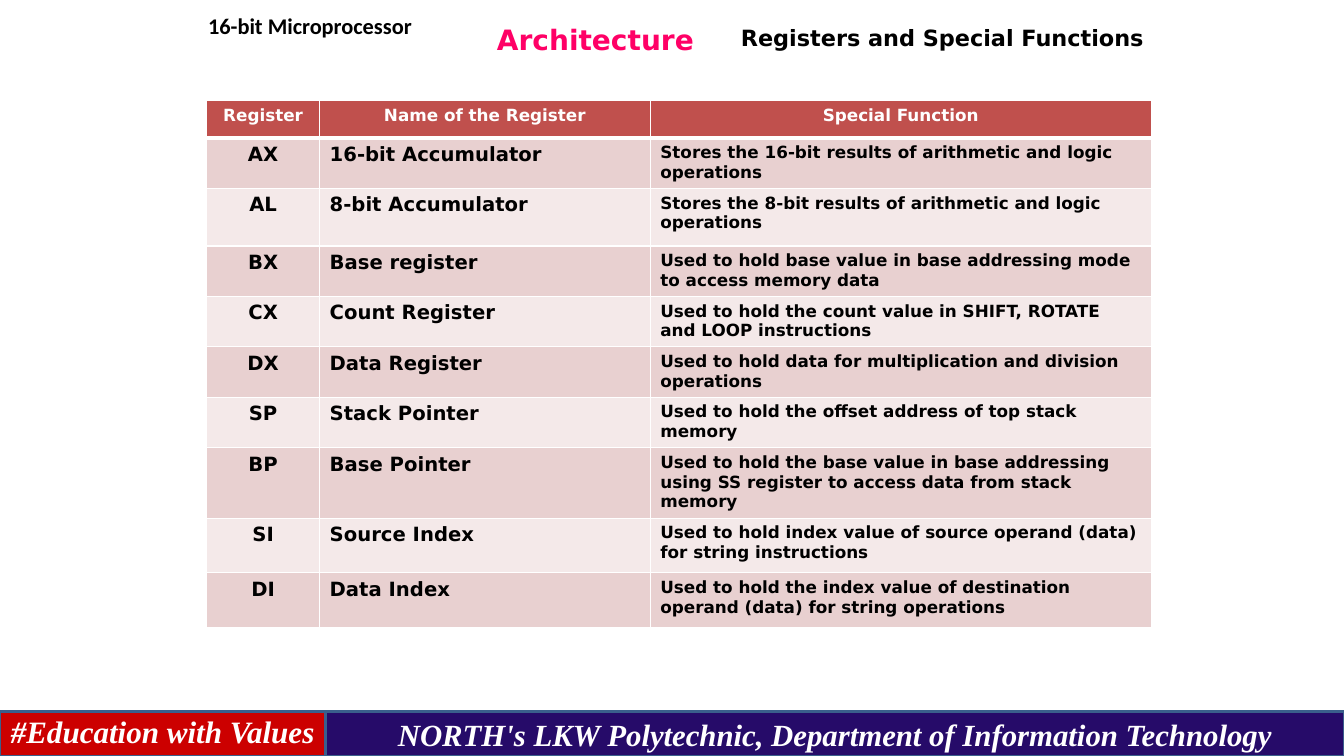
from lxml import etree
from pptx import Presentation
from pptx.dml.color import RGBColor
from pptx.enum.shapes import MSO_SHAPE
from pptx.enum.text import MSO_ANCHOR, PP_ALIGN
from pptx.oxml.ns import qn
from pptx.util import Inches, Pt

# Content
HEADER = ("Register", "Name of the Register", "Special Function")
REGISTERS = [
    ("AX", "16-bit Accumulator", "Stores the 16-bit results of arithmetic and logic operations"),
    ("AL", "8-bit Accumulator", "Stores the 8-bit results of arithmetic and logic operations"),
    ("BX", "Base register", "Used to hold base value in base addressing mode to access memory data"),
    ("CX", "Count Register", "Used to hold the count value in SHIFT, ROTATE and LOOP instructions"),
    ("DX", "Data Register", "Used to hold data for multiplication and division operations"),
    ("SP", "Stack Pointer", "Used to hold the offset address of top stack memory"),
    ("BP", "Base Pointer", "Used to hold the base value in base addressing using SS register "
                           "to access data from stack memory"),
    ("SI", "Source Index", "Used to hold index value of source operand (data) for string instructions"),
    ("DI", "Data Index", "Used to hold the index value of destination operand (data) "
                         "for string operations"),
]

# Colours and fonts
WHITE = RGBColor(0xFF, 0xFF, 0xFF)
BLACK = RGBColor(0, 0, 0)
PINK = RGBColor(0xFF, 0x00, 0x66)
HEAD_RED = RGBColor(0xC0, 0x50, 0x4D)
BANDS = (RGBColor(0xE8, 0xD0, 0xD0), RGBColor(0xF4, 0xE9, 0xE9))
FOOT_RED = RGBColor(0xCC, 0x00, 0x00)
FOOT_BLUE = RGBColor(0x26, 0x0B, 0x69)
FOOT_LINE = RGBColor(0x3A, 0x5F, 0x8C)
SANS, CALIBRI, SERIF = "DejaVu Sans", "Calibri", "Times New Roman"
LEFT, CENTER = PP_ALIGN.LEFT, PP_ALIGN.CENTER
TOP, MIDDLE = MSO_ANCHOR.TOP, MSO_ANCHOR.MIDDLE

# Layout in inches
WIDTH, HEIGHT = 13.33, 7.5
FOOT_H, FOOT_SPLIT = 0.44, 3.23
TABLE_AT = (2.05, 1)
COLS = (1.12, 3.28, 4.97)
ROWS = (0.37, 0.5, 0.57, 0.5, 0.5, 0.5, 0.5, 0.7, 0.54, 0.54)

# text, box, size, font, colour, alignment, anchor, wrap
TITLES = [
    ("Architecture", (4.83, 0.12, 6.58, 0.53), 20, SANS, PINK, LEFT, MIDDLE, True),
    ("16-bit Microprocessor", (1.74, 0.07, 2.67, 0.37), 16, CALIBRI, BLACK, CENTER, TOP, True),
    ("Registers and Special Functions", (7.25, 0.19, 4.21, 0.37), 16, SANS, BLACK, LEFT, TOP, False),
]
# text, left, right, fill, size, line spacing, space before
FOOTER = [
    ("#Education with Values", 0, FOOT_SPLIT, FOOT_RED, 22.2, 0.9, 10),
    ("NORTH's LKW Polytechnic, Department of Information Technology",
     FOOT_SPLIT, WIDTH, FOOT_BLUE, 22, 1.0, 0),
]


def write(tf, text, size, font, color, align, italic=False):
    tf.text = text
    p = tf.paragraphs[0]
    p.alignment = align
    f = p.runs[0].font
    f.size, f.name, f.bold, f.italic = Pt(size), font, True, italic
    f.color.rgb = color
    return p


def border(cell, bottom):
    """White cell borders; they must come before the fill."""
    pr = cell._tc.get_or_add_tcPr()
    for side, width in (("L", 1), ("R", 1), ("T", 1), ("B", bottom)):
        ln = etree.SubElement(pr, qn(f"a:ln{side}"), w=str(Pt(width)))
        fill = etree.SubElement(ln, qn("a:solidFill"))
        etree.SubElement(fill, qn("a:srgbClr"), val=str(WHITE))


def add_titles(slide):
    for text, box, size, font, color, align, anchor, wrap in TITLES:
        tf = slide.shapes.add_textbox(*map(Inches, box)).text_frame
        tf.word_wrap, tf.vertical_anchor = wrap, anchor
        write(tf, text, size, font, color, align)


def add_registers(slide):
    box = (*TABLE_AT, sum(COLS), sum(ROWS))
    table = slide.shapes.add_table(len(ROWS), len(COLS), *map(Inches, box)).table
    for col, width in zip(table.columns, COLS):
        col.width = Inches(width)
    for row, height in zip(table.rows, ROWS):
        row.height = Inches(height)
    for i, texts in enumerate([HEADER, *REGISTERS]):
        head = i == 0
        for j, text in enumerate(texts):
            cell = table.cell(i, j)
            border(cell, 3 if head else 1)
            cell.fill.solid()
            cell.fill.fore_color.rgb = HEAD_RED if head else BANDS[(i - 1) % 2]
            write(cell.text_frame, text, 12 if head or j == 2 else 14, SANS,
                  WHITE if head else BLACK, CENTER if head or j == 0 else LEFT)


def add_footer(slide):
    for text, left, right, fill, size, spacing, before in FOOTER:
        box = (left, HEIGHT - FOOT_H, right - left, FOOT_H)
        sp = slide.shapes.add_shape(MSO_SHAPE.RECTANGLE, *map(Inches, box))
        sp.shadow.inherit = False
        sp.fill.solid()
        sp.fill.fore_color.rgb = fill
        sp.line.color.rgb = FOOT_LINE
        sp.line.width = Pt(2)
        tf = sp.text_frame
        tf.word_wrap, tf.vertical_anchor = True, MIDDLE
        tf.margin_left = tf.margin_right = Inches(0.05)
        p = write(tf, text, size, SERIF, WHITE, CENTER, italic=True)
        p.line_spacing, p.space_before = spacing, Pt(before)


def main():
    prs = Presentation()
    prs.slide_width, prs.slide_height = Inches(WIDTH), Inches(HEIGHT)
    slide = prs.slides.add_slide(prs.slide_layouts[6])
    add_titles(slide)
    add_registers(slide)
    add_footer(slide)
    prs.save("out.pptx")


if __name__ == "__main__":
    main()
